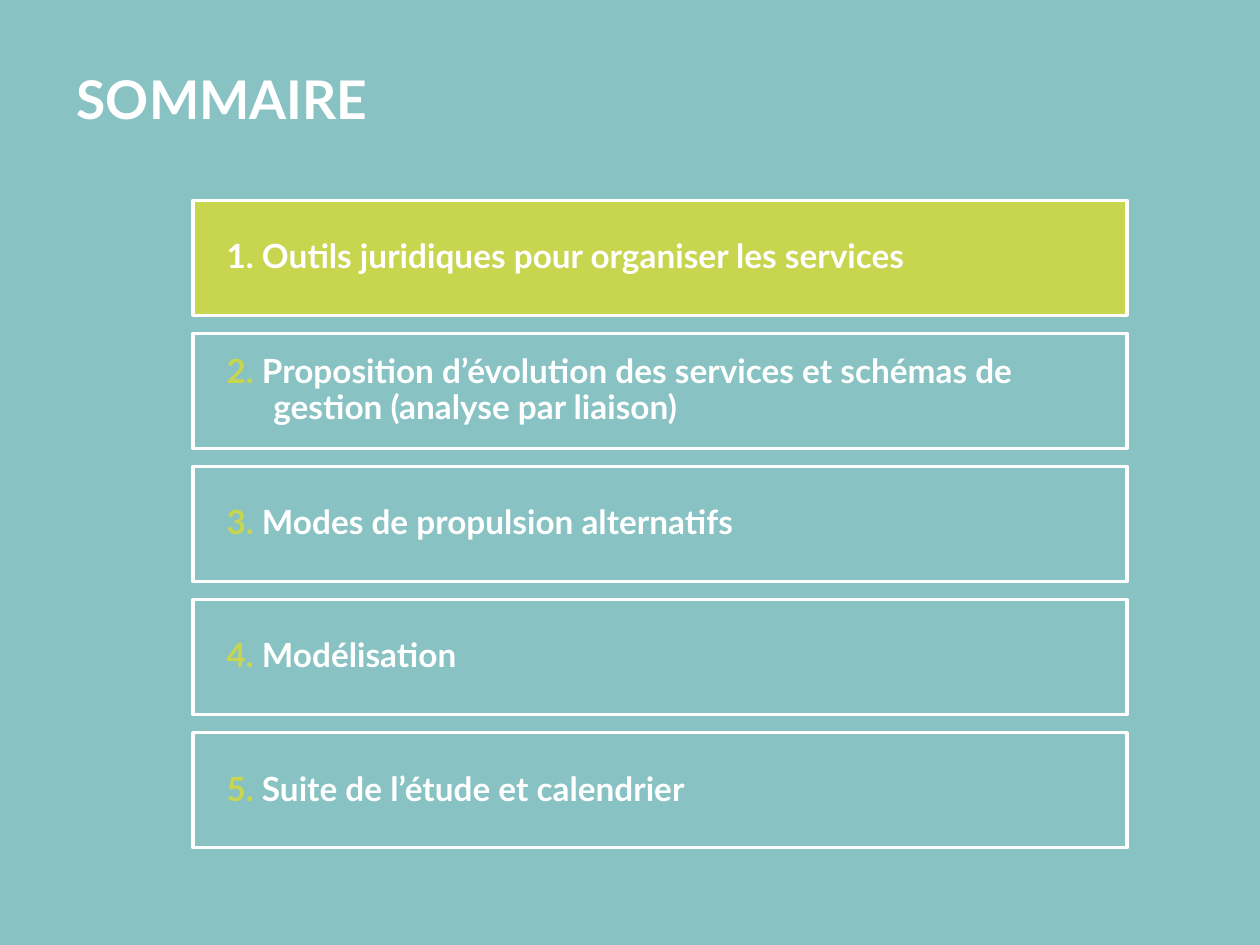
import pptx
import pptx.util
import pptx.dml.color
import pptx.enum.shapes
import pptx.enum.text

Inches = pptx.util.Inches
Pt = pptx.util.Pt
RGBColor = pptx.dml.color.RGBColor
Anchor = pptx.enum.text.MSO_ANCHOR

TITLE = "SOMMAIRE"
CHAPTERS = [
    "Outils juridiques pour organiser les services",
    "Proposition d’évolution des services et schémas de gestion (analyse par liaison)",
    "Modes de propulsion alternatifs",
    "Modélisation",
    "Suite de l’étude et calendrier",
]
CURRENT = 1

TEAL = RGBColor(0x88, 0xC2, 0xC3)
LIME = RGBColor(0xC8, 0xD5, 0x4F)
WHITE = RGBColor(0xFF, 0xFF, 0xFF)

LEFT, TOP, WIDTH, HEIGHT, STEP = 1.61, 1.67, 7.79, 0.96, 1.11


def add_text(para, text, *, size, color):
    span = para.add_run()
    span.text = text
    span.font.name = "Lato"
    span.font.size = Pt(size)
    span.font.bold = True
    span.font.color.rgb = color


def set_frame(frame, *, anchor, side, edge):
    frame.word_wrap = True
    frame.auto_size = pptx.enum.text.MSO_AUTO_SIZE.NONE
    frame.vertical_anchor = anchor
    frame.margin_left = frame.margin_right = Inches(side)
    frame.margin_top = frame.margin_bottom = Inches(edge)
    para = frame.paragraphs[0]
    para.alignment = pptx.enum.text.PP_ALIGN.LEFT
    return para


def add_chapter(page, number, text):
    box = page.shapes.add_shape(
        pptx.enum.shapes.MSO_SHAPE.RECTANGLE,
        Inches(LEFT), Inches(TOP + (number - 1) * STEP),
        Inches(WIDTH), Inches(HEIGHT))
    box.name = f"Chapitre {number}"
    box.shadow.inherit = False
    box.line.color.rgb = WHITE
    box.line.width = Pt(2)
    if number == CURRENT:
        box.fill.solid()
        box.fill.fore_color.rgb = LIME
    else:
        box.fill.background()
    para = set_frame(box.text_frame, anchor=Anchor.MIDDLE, side=0.08, edge=0.08)
    para.line_spacing = 0.9
    para.space_after = Pt(4)
    indents = para._p.get_or_add_pPr()
    indents.set("marL", str(Inches(0.59)))
    indents.set("indent", str(Inches(-0.39)))
    number_color = WHITE if number == CURRENT else LIME
    add_text(para, f"{number}. ", size=20, color=number_color)
    add_text(para, text, size=20, color=WHITE)


def main():
    deck = pptx.Presentation()
    deck.slide_width, deck.slide_height = Inches(10.51), Inches(7.88)
    page = deck.slides.add_slide(deck.slide_layouts[5])
    page.background.fill.solid()
    page.background.fill.fore_color.rgb = TEAL

    title = page.shapes.title
    title.left, title.top = Inches(0.53), Inches(0.49)
    title.width, title.height = Inches(9.83), Inches(0.71)
    para = set_frame(title.text_frame, anchor=Anchor.TOP, side=0.11, edge=0.06)
    add_text(para, TITLE, size=32, color=WHITE)

    for number, text in enumerate(CHAPTERS, start=1):
        add_chapter(page, number, text)
    deck.save("out.pptx")


if __name__ == "__main__":
    main()
